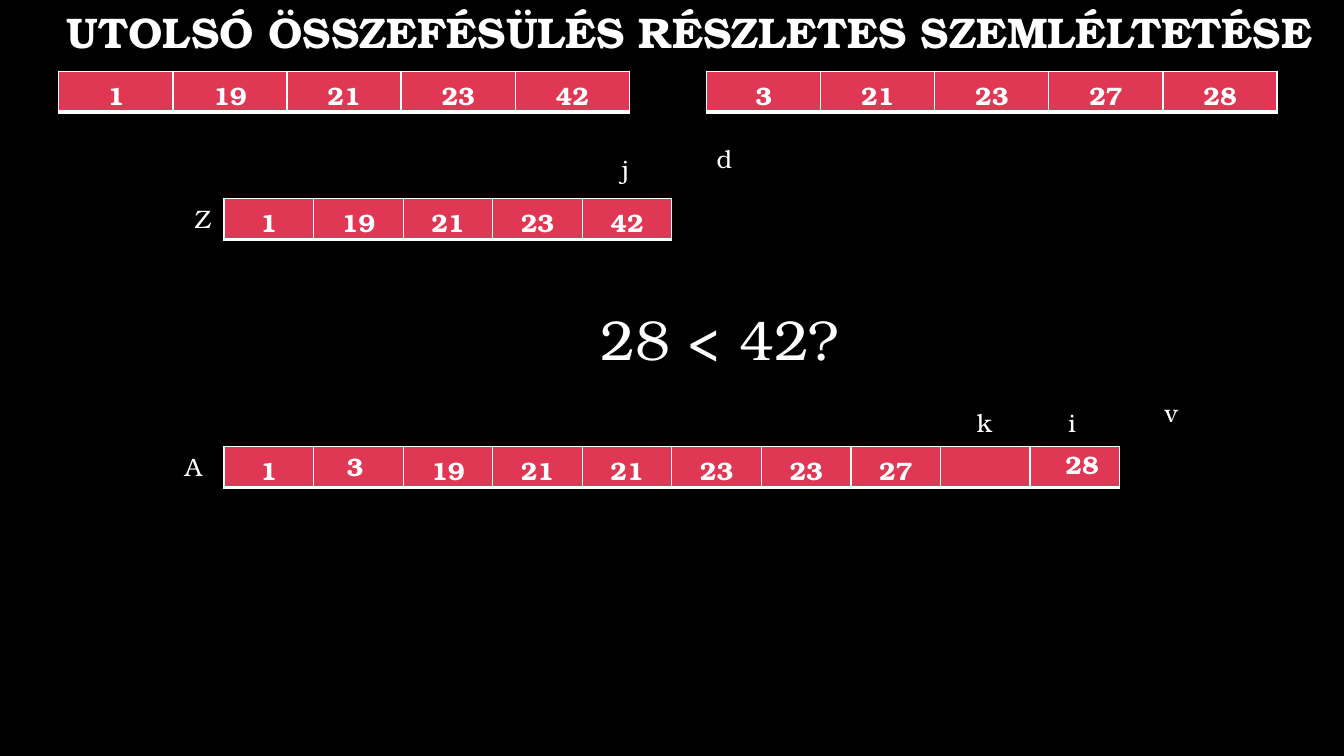
from lxml.etree import SubElement
from pptx import Presentation
from pptx.dml.color import RGBColor
from pptx.enum.text import MSO_ANCHOR, PP_ALIGN
from pptx.oxml.ns import qn
from pptx.util import Pt

FONT = "TeX Gyre Bonum"
WHITE, RED, BLACK = "FFFFFF", "E03754", "000000"
ROW_HEIGHT = 29.2
BORDERS = (("a:lnL", 1), ("a:lnR", 1), ("a:lnT", 1), ("a:lnB", 3))

TITLE = "UTOLSÓ ÖSSZEFÉSÜLÉS RÉSZLETES SZEMLÉLTETÉSE"

# left, top, column width, values
ARRAYS = [
    (42, 51, 81.5, ["1", "19", "21", "23", "42"]),
    (504.7, 51, 81.5, ["3", "21", "23", "27", "28"]),
    (160, 141.8, 64, ["1", "19", "21", "23", "42"]),
    (160, 319, 64, ["1", "", "19", "21", "21", "23", "23", "27", "", ""]),
]

# text, left, top, width, height, size, bold
LABELS = [
    ("Z", 132, 141.8, 28, 29, 18, False),
    ("A", 125, 319, 28, 29, 18, False),
    ("i", 756, 287.3, 68, 29, 18, False),
    ("j", 437, 105.8, 68, 29, 18, False),
    ("3", 240.5, 319, 58, 29, 18, True),
    ("28 < 42?", 422, 213.8, 309, 55.5, 40, False),
    ("k", 690.5, 287.3, 68, 29, 18, False),
    ("28", 754, 317.5, 58, 29, 18, True),
    ("d", 504.7, 98.6, 68, 29, 18, False),
    ("v", 825, 280, 68, 29, 18, False),
]


def color(hex_value):
    return RGBColor.from_string(hex_value)


def style(paragraph, size, bold, alignment):
    paragraph.alignment = alignment
    font = paragraph.font
    font.name, font.size, font.bold = FONT, Pt(size), bold
    font.color.rgb = color(WHITE)


def add_label(slide, text, left, top, width, height, size, bold,
              alignment=PP_ALIGN.LEFT):
    shape = slide.shapes.add_textbox(Pt(left), Pt(top), Pt(width), Pt(height))
    frame = shape.text_frame
    frame.word_wrap = True
    frame.text = text
    style(frame.paragraphs[0], size, bold, alignment)
    return frame


def add_borders(cell):
    properties = cell._tc.get_or_add_tcPr()
    for tag, width in BORDERS:
        line = SubElement(properties, qn(tag), w=str(Pt(width)))
        fill = SubElement(line, qn("a:solidFill"))
        SubElement(fill, qn("a:srgbClr"), val=WHITE)


def add_array(slide, left, top, column_width, values):
    """Draw an array as a one-row table."""
    table = slide.shapes.add_table(
        1, len(values), Pt(left), Pt(top),
        Pt(column_width * len(values)), Pt(ROW_HEIGHT)).table
    table.first_row = table.horz_banding = False
    for column, cell, value in zip(table.columns, table.rows[0].cells, values):
        column.width = Pt(column_width)
        cell.text = value
        style(cell.text_frame.paragraphs[0], 18, True, PP_ALIGN.CENTER)
        add_borders(cell)
        cell.fill.solid()
        cell.fill.fore_color.rgb = color(RED)


def main():
    presentation = Presentation()
    presentation.slide_width, presentation.slide_height = Pt(960), Pt(540)
    slide = presentation.slides.add_slide(presentation.slide_layouts[6])
    slide.background.fill.solid()
    slide.background.fill.fore_color.rgb = color(BLACK)

    title = add_label(slide, TITLE, 16, 0, 952.5, 49, 30.6, True,
                      PP_ALIGN.CENTER)
    title.vertical_anchor = MSO_ANCHOR.MIDDLE
    title.paragraphs[0].line_spacing = 0.9

    for array in ARRAYS:
        add_array(slide, *array)
    for label in LABELS:
        add_label(slide, *label)
    presentation.save("out.pptx")


if __name__ == "__main__":
    main()
